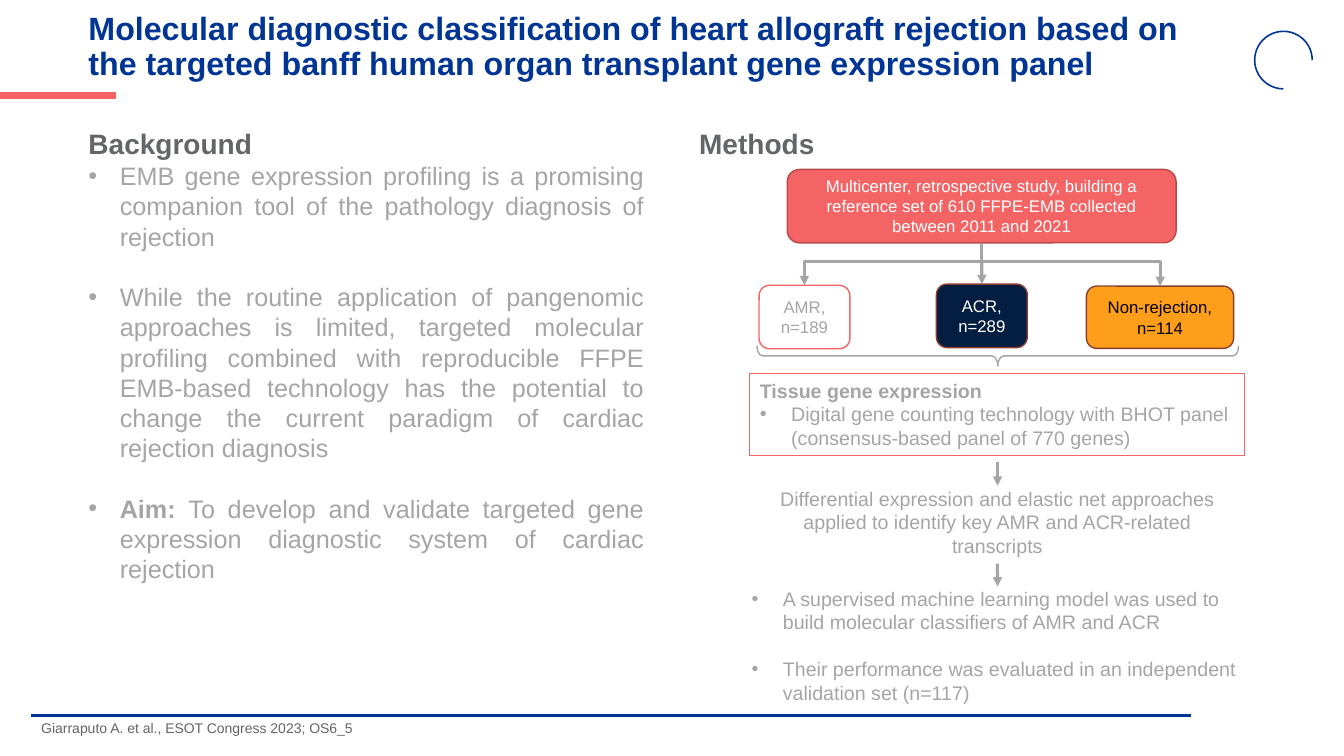
"""Build the slide on molecular classification of heart allograft rejection."""
from dataclasses import dataclass
from typing import Optional

from lxml import etree
from pptx import Presentation
from pptx.dml.color import RGBColor
from pptx.enum import shapes, text
from pptx.oxml import ns
from pptx.util import Cm, Pt


@dataclass(frozen=True)
class Theme:
    """Colours and type sizes."""
    font: str = "Arial"
    blue: str = "003594"
    coral: str = "F46465"
    coral_edge: str = "B54A4B"
    navy: str = "041E42"
    orange: str = "FF9E1B"
    rust: str = "8B3E30"
    white: str = "FFFFFF"
    black: str = "000000"
    slate: str = "636569"
    grey: str = "A5A5A5"
    title: int = 23
    heading: int = 20
    body: int = 18
    step: int = 14
    box: int = 12
    source: int = 10


THEME = Theme()
LEFT, CENTER, JUSTIFY = text.PP_ALIGN.LEFT, text.PP_ALIGN.CENTER, text.PP_ALIGN.JUSTIFY
TOP, MIDDLE = text.MSO_ANCHOR.TOP, text.MSO_ANCHOR.MIDDLE
KIND = shapes.MSO_SHAPE


@dataclass(frozen=True)
class Para:
    """A paragraph, with an optional bold lead-in."""
    words: str
    size: int
    color: str = THEME.grey
    bold: bool = False
    align: text.PP_ALIGN = LEFT
    bullet: bool = False
    before: float = 0
    spacing: Optional[float] = None
    lead: str = ""


@dataclass(frozen=True)
class Block:
    """A text block or box, measured in centimetres."""
    left: float
    top: float
    width: float
    height: float
    paras: tuple = ()
    kind: Optional[shapes.MSO_SHAPE] = None
    fill: Optional[str] = None
    edge: str = THEME.grey
    weight: float = 1
    anchor: text.MSO_ANCHOR = TOP
    turn: float = 0
    adjust: tuple = ()


@dataclass(frozen=True)
class Line:
    """A straight or elbow line, measured in centimetres."""
    x1: float
    y1: float
    x2: float
    y2: float
    color: str = THEME.grey
    weight: float = 2.25
    arrow: bool = False
    elbow: bool = False


def write_para(para, data: Para) -> None:
    """Write one paragraph with its bullet, spacing and font."""
    para.alignment = data.align
    if data.before:
        para.space_before = Pt(data.before)
    if data.spacing:
        para.line_spacing = data.spacing
    if data.bullet:
        props = para._p.get_or_add_pPr()
        props.set("marL", str(Cm(0.79)))
        props.set("indent", str(-Cm(0.79)))
        etree.SubElement(props, ns.qn("a:buFont"), typeface=THEME.font)
        etree.SubElement(props, ns.qn("a:buChar"), char="•")
    para.font.name = THEME.font
    para.font.size = Pt(data.size)
    para.font.color.rgb = RGBColor.from_string(data.color)
    if data.lead:
        lead = para.add_run()
        lead.text = data.lead
        lead.font.bold = True
    else:
        para.font.bold = data.bold
    para.add_run().text = data.words


def draw_block(slide, block: Block):
    """Draw a block and return its shape."""
    place = [Cm(v) for v in (block.left, block.top, block.width, block.height)]
    if block.kind is None:
        shape = slide.shapes.add_textbox(*place)
    else:
        shape = slide.shapes.add_shape(block.kind, *place)
        shape.shadow.inherit = False
        shape.rotation = block.turn
        for index, value in enumerate(block.adjust):
            shape.adjustments[index] = value
        if block.fill:
            shape.fill.solid()
            shape.fill.fore_color.rgb = RGBColor.from_string(block.fill)
        else:
            shape.fill.background()
        shape.line.color.rgb = RGBColor.from_string(block.edge)
        shape.line.width = Pt(block.weight)
    frame = shape.text_frame
    frame.word_wrap = True
    frame.vertical_anchor = block.anchor
    for index, data in enumerate(block.paras):
        write_para(frame.add_paragraph() if index else frame.paragraphs[0], data)
    return shape


def draw_line(slide, line: Line):
    """Draw a line and return its connector."""
    kind = shapes.MSO_CONNECTOR.ELBOW if line.elbow else shapes.MSO_CONNECTOR.STRAIGHT
    ends = [Cm(v) for v in (line.x1, line.y1, line.x2, line.y2)]
    connector = slide.shapes.add_connector(kind, *ends)
    connector.line.color.rgb = RGBColor.from_string(line.color)
    connector.line.width = Pt(line.weight)
    props = connector._element.spPr
    if line.arrow:
        etree.SubElement(connector.line._get_or_add_ln(), ns.qn("a:tailEnd"), type="triangle")
    if line.elbow:
        guides = props.find(ns.qn("a:prstGeom")).get_or_add_avLst()
        etree.SubElement(guides, ns.qn("a:gd"), name="adj1", fmla="val 100100")
    etree.SubElement(props, ns.qn("a:effectLst"))
    return connector


def box(left: float, top: float, width: float, height: float, words: str,
        fill: str, edge: str, color: str) -> Block:
    """Describe a rounded box of the study flow."""
    label = Para(words, THEME.box, color, align=CENTER)
    return Block(left, top, width, height, (label,), KIND.ROUNDED_RECTANGLE, fill, edge,
                 anchor=MIDDLE)


def point(words: str, size: int, before: float = 0, align: text.PP_ALIGN = LEFT,
          lead: str = "") -> Para:
    """Describe a bulleted paragraph."""
    return Para(words, size, align=align, bullet=True, before=before, lead=lead)


BODY_GAP, STEP_GAP = 21.6, 16.8
BUS_Y, STUDY_X, FLOW_X = 6.58, 24.74, 25.14

RULES = (Line(0, 2.41, 2.92, 2.41, THEME.coral, 4.5),
         Line(0.79, 18.03, 30.02, 18.03, THEME.blue, 1.5))
FRAME = (
    Block(1.98, 0.38, 29.21, 1.63, (Para(
        "Molecular diagnostic classification of heart allograft rejection based on the "
        "targeted banff human organ transplant gene expression panel",
        THEME.title, THEME.blue, True, spacing=0.9),), anchor=MIDDLE),
    Block(0.79, 18.06, 19.91, 0.86, (Para(
        "Giarraputo A. et al., ESOT Congress 2023; OS6_5",
        THEME.source, THEME.slate, spacing=0.9),)),
    Block(31.62, 0.79, 1.45, 1.45, kind=KIND.ARC, edge=THEME.blue, weight=1.13,
          adjust=(54, 0)),
    Block(1.98, 3.07, 14.5, 11.89, (
        Para("Background", THEME.heading, THEME.slate, True),
        point("EMB gene expression profiling is a promising companion tool of the pathology "
              "diagnosis of rejection", THEME.body, align=JUSTIFY),
        point("While the routine application of pangenomic approaches is limited, targeted "
              "molecular profiling combined with reproducible FFPE EMB-based technology has "
              "the potential to change the current paradigm of cardiac rejection diagnosis",
              THEME.body, BODY_GAP, JUSTIFY),
        point("To develop and validate targeted gene expression diagnostic system of cardiac "
              "rejection", THEME.body, BODY_GAP, JUSTIFY, "Aim: "))),
    Block(17.37, 3.07, 14.76, 1.12, (Para("Methods", THEME.heading, THEME.slate, True),)),
    Block(24.89, 2.9, 0.51, 12.14, kind=KIND.RIGHT_BRACE, turn=90, adjust=(0.28, 0.5)),
    Block(18.9, 9.42, 12.47, 2.06, (
        Para("Tissue gene expression", THEME.step, bold=True),
        point("Digital gene counting technology with BHOT panel (consensus-based panel of "
              "770 genes)", THEME.step)), KIND.RECTANGLE, edge=THEME.coral, weight=0.75),
    Block(18.69, 14.66, 12.95, 3.25, (
        point("A supervised machine learning model was used to build molecular classifiers "
              "of AMR and ACR", THEME.step),
        point("Their performance was evaluated in an independent validation set (n=117)",
              THEME.step, STEP_GAP))),
)
STUDY = box(19.84, 4.27, 9.8, 1.85, "Multicenter, retrospective study, building a reference set "
            "of 610 FFPE-EMB collected between 2011 and 2021",
            THEME.coral, THEME.coral_edge, THEME.white)
AMR = box(19.13, 7.19, 2.29, 1.6, "AMR, n=189", THEME.white, THEME.coral, THEME.grey)
ACR = box(23.6, 7.16, 2.29, 1.6, "ACR, n=289", THEME.navy, THEME.rust, THEME.white)
NON_REJECTION = box(27.38, 7.21, 3.71, 1.57, "Non-rejection, n=114",
                    THEME.orange, THEME.rust, THEME.black)
ANALYSIS = Block(18.9, 12.14, 12.47, 2.06, (Para(
    "Differential expression and elastic net approaches applied to identify key AMR and "
    "ACR-related transcripts", THEME.step, align=CENTER),))


def main() -> None:
    """Build and save the slide."""
    deck = Presentation()
    deck.slide_width, deck.slide_height = Cm(33.87), Cm(19.05)
    slide = deck.slides.add_slide(deck.slide_layouts[6])
    for rule in RULES:
        draw_line(slide, rule)
    for block in FRAME:
        draw_block(slide, block)
    study, acr, analysis = (draw_block(slide, block) for block in (STUDY, ACR, ANALYSIS))
    for group in (AMR, NON_REJECTION):
        draw_block(slide, group)
        draw_line(slide, Line(STUDY_X, BUS_Y, group.left + group.width / 2, group.top,
                              arrow=True, elbow=True))
    trunk = draw_line(slide, Line(STUDY_X, 6.12, STUDY_X, BUS_Y))
    trunk.begin_connect(study, 2)
    to_acr = draw_line(slide, Line(STUDY_X, BUS_Y, STUDY_X, 7.16, arrow=True))
    to_acr.end_connect(acr, 0)
    draw_line(slide, Line(FLOW_X, 11.63, FLOW_X, 12.24, arrow=True))
    to_model = draw_line(slide, Line(FLOW_X, 14.2, FLOW_X, 14.78, arrow=True))
    to_model.begin_connect(analysis, 2)


    deck.save("out.pptx")


if __name__ == "__main__":
    main()
